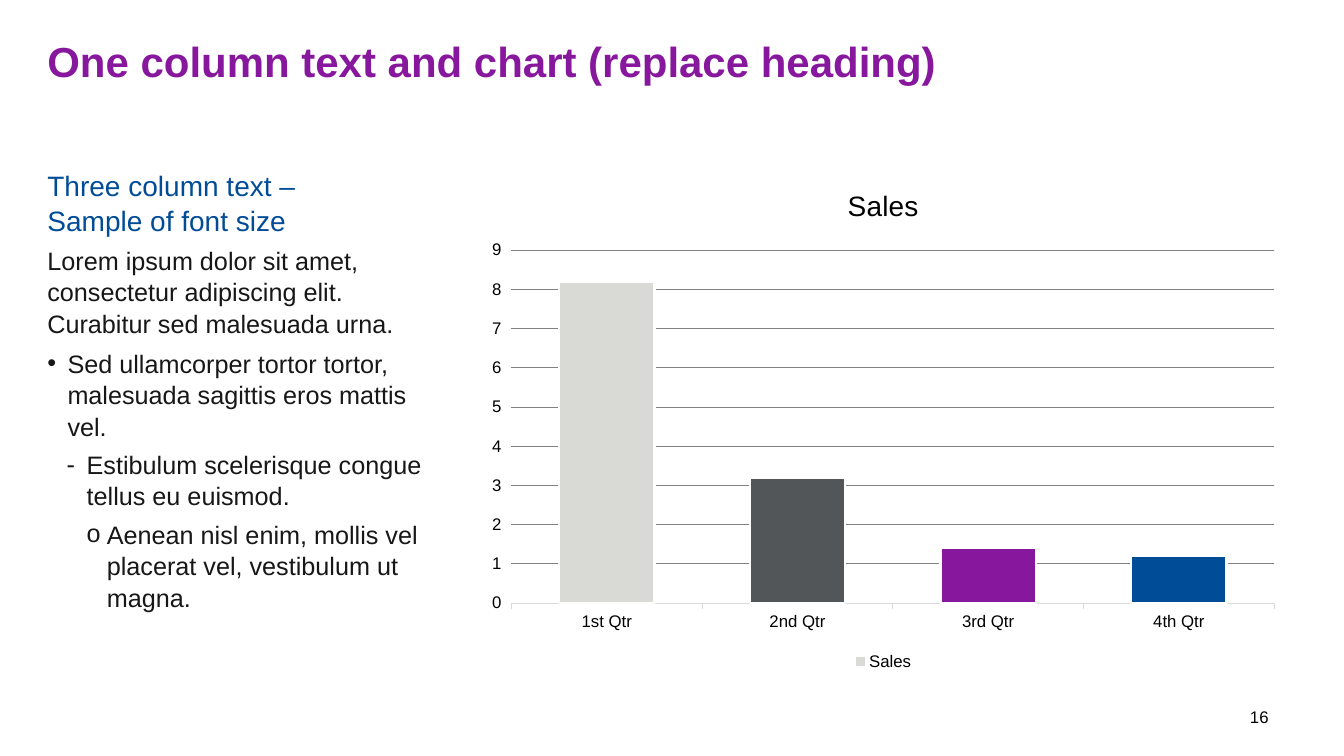
from dataclasses import dataclass

from lxml import etree
from pptx import Presentation
from pptx import util as u
from pptx.chart import data as chart_data
from pptx.dml import color
from pptx.enum import chart as chart_enum
from pptx.enum import text
from pptx.oxml import ns

FONT = "Arial"
COLORS = {
    "purple": "87189D",
    "blue": "004C97",
    "ink": "181717",
    "black": "000000",
    "white": "FFFFFF",
    "silver": "D9D9D6",
    "slate": "535659",
    "axis": "D9D9D9",
    "grid": "808080",
}
HANGING_INDENT = 0.2


@dataclass(frozen=True)
class Line:
    wording: str
    size: float = 18
    color: str = "ink"
    bold: bool = False
    before: float = 0
    spacing: float = 1.04
    indent: float = 0
    bullet: str = ""
    align: text.PP_ALIGN = text.PP_ALIGN.LEFT


@dataclass(frozen=True)
class Block:
    left: float
    top: float
    width: float
    height: float
    lines: tuple[Line, ...]
    inset: float = 0
    anchor: text.MSO_ANCHOR = text.MSO_ANCHOR.TOP


@dataclass(frozen=True)
class Quarter:
    label: str
    sales: float
    color: str


BLOCKS = (
    Block(12.17, 6.91, 0.64, 0.4,
          (Line("16", 12, "black", spacing=1, align=text.PP_ALIGN.CENTER),),
          inset=0.05, anchor=text.MSO_ANCHOR.MIDDLE),
    Block(0.47, 0.41, 12.34, 0.86,
          (Line("One column text and chart (replace heading)", 30, "purple",
                bold=True, spacing=0.9),)),
    Block(0.47, 1.66, 3.73, 5.04, (
        Line("Three column text –\nSample of font size", 20, "blue", before=10),
        Line("Lorem ipsum dolor sit amet, consectetur adipiscing elit. "
             "Curabitur sed malesuada urna.", before=5),
        Line("Sed ullamcorper tortor tortor, malesuada sagittis eros mattis vel.",
             before=6, indent=0.2, bullet="•"),
        Line("Estibulum scelerisque congue tellus eu euismod.",
             before=5, indent=0.39, bullet="-"),
        Line("Aenean nisl enim, mollis vel placerat vel, vestibulum ut magna.",
             before=5, indent=0.59, bullet="o"),
    )),
)
QUARTERS = (
    Quarter("1st Qtr", 8.2, "silver"),
    Quarter("2nd Qtr", 3.2, "slate"),
    Quarter("3rd Qtr", 1.4, "purple"),
    Quarter("4th Qtr", 1.2, "blue"),
)


def rgb(name: str) -> color.RGBColor:
    return color.RGBColor.from_string(COLORS[name])


def style_font(font, size: float, color_name: str, bold: bool = False) -> None:
    font.name = FONT
    font.size = u.Pt(size)
    font.bold = bold
    font.color.rgb = rgb(color_name)


def style_stroke(stroke, color_name: str, width: float) -> None:
    stroke.color.rgb = rgb(color_name)
    stroke.width = u.Pt(width)


def add_bullet(paragraph, line: Line) -> None:
    properties = paragraph._p.get_or_add_pPr()
    properties.set("marL", str(u.Inches(line.indent)))
    properties.set("indent", str(-u.Inches(HANGING_INDENT)))
    etree.SubElement(properties, ns.qn("a:buFont"), typeface=FONT)
    etree.SubElement(properties, ns.qn("a:buChar"), char=line.bullet)


def write_line(paragraph, line: Line) -> None:
    paragraph.text = line.wording
    paragraph.alignment = line.align
    paragraph.line_spacing = line.spacing
    paragraph.space_before = u.Pt(line.before)
    for run in paragraph.runs:
        style_font(run.font, line.size, line.color, line.bold)
    if line.bullet:
        add_bullet(paragraph, line)


def add_block(slide, block: Block) -> None:
    frame = slide.shapes.add_textbox(
        u.Inches(block.left), u.Inches(block.top),
        u.Inches(block.width), u.Inches(block.height)).text_frame
    frame.word_wrap = True
    frame.vertical_anchor = block.anchor
    frame.margin_left = frame.margin_right = u.Inches(block.inset)
    frame.margin_top = frame.margin_bottom = u.Inches(block.inset)
    for index, line in enumerate(block.lines):
        paragraph = frame.add_paragraph() if index else frame.paragraphs[0]
        write_line(paragraph, line)


def add_sales_chart(slide, quarters: tuple[Quarter, ...]) -> None:
    figures = chart_data.CategoryChartData()
    figures.categories = [quarter.label for quarter in quarters]
    figures.add_series("Sales", [quarter.sales for quarter in quarters])
    sales = slide.shapes.add_chart(
        chart_enum.XL_CHART_TYPE.COLUMN_CLUSTERED, u.Inches(4.72),
        u.Inches(1.66), u.Inches(8.08), u.Inches(5.03), figures).chart
    style_font(sales.font, 10, "black")

    sales.has_title = True
    heading = sales.chart_title.text_frame.paragraphs[0]
    heading.text = "Sales"
    style_font(heading.runs[0].font, 20, "black")
    sales.chart_title.include_in_layout = False

    sales.has_legend = True
    sales.legend.position = chart_enum.XL_LEGEND_POSITION.BOTTOM
    sales.legend.include_in_layout = False
    style_font(sales.legend.font, 12, "black")

    for axis in (sales.category_axis, sales.value_axis):
        axis.major_tick_mark = chart_enum.XL_TICK_MARK.OUTSIDE
        style_font(axis.tick_labels.font, 12, "black")
    style_stroke(sales.category_axis.format.line, "axis", 0.75)
    sales.value_axis.format.line.fill.background()
    sales.value_axis.minimum_scale = 0
    sales.value_axis.maximum_scale = 9
    sales.value_axis.major_unit = 1
    style_stroke(sales.value_axis.major_gridlines.format.line, "grid", 0.75)

    plot = sales.plots[0]
    plot.gap_width = 100
    plot.vary_by_categories = False
    columns = plot.series[0]
    column_formats = [columns.points[i].format for i in range(len(quarters))]
    fills = [quarters[0].color] + [quarter.color for quarter in quarters]
    for column, fill in zip([columns.format] + column_formats, fills):
        column.fill.solid()
        column.fill.fore_color.rgb = rgb(fill)
        style_stroke(column.line, "white", 1.5)


def main() -> None:
    deck = Presentation()
    deck.slide_width = u.Inches(13.33)
    deck.slide_height = u.Inches(7.5)
    slide = deck.slides.add_slide(deck.slide_layouts[6])
    for block in BLOCKS:
        add_block(slide, block)
    add_sales_chart(slide, QUARTERS)
    deck.save("out.pptx")


if __name__ == "__main__":
    main()
